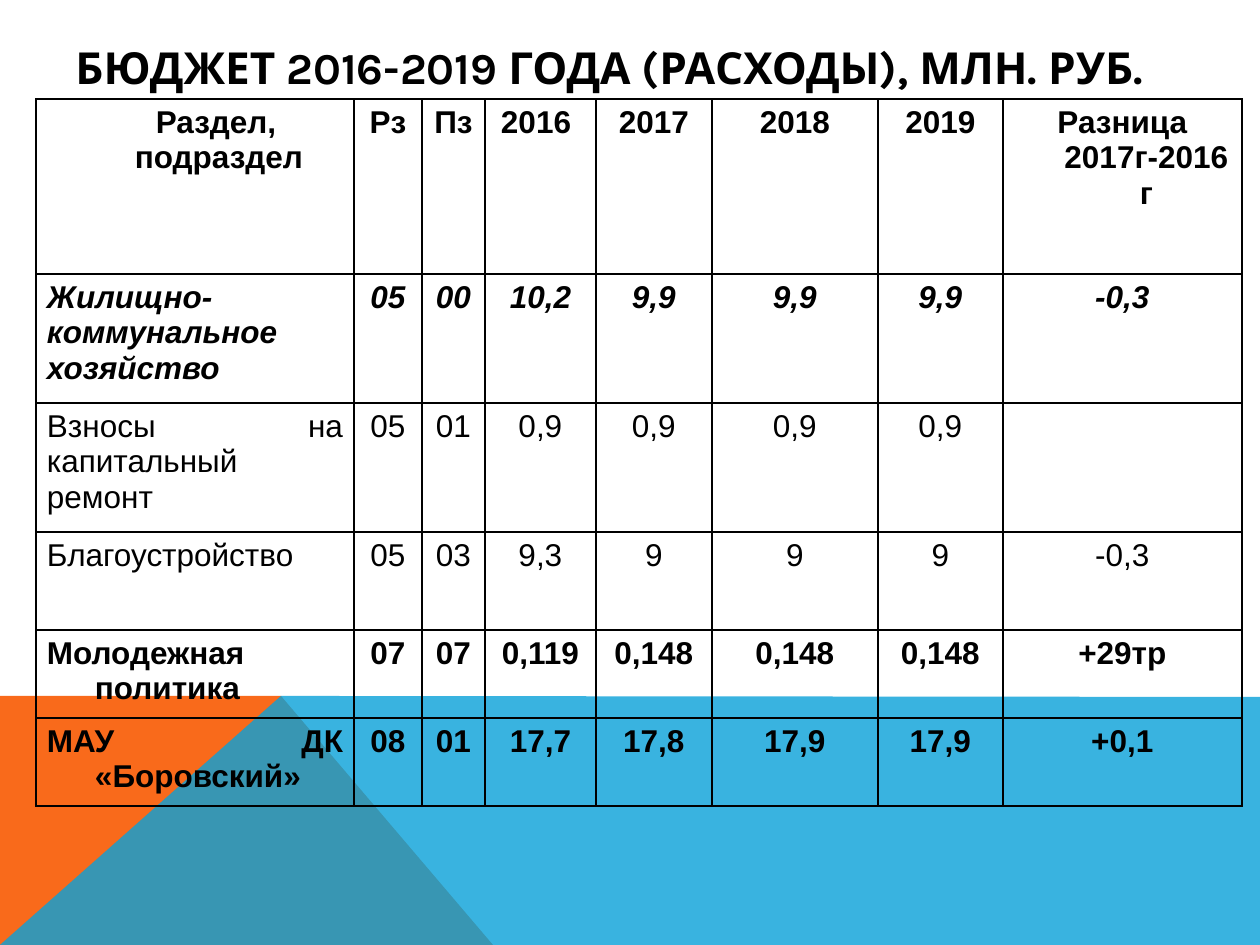
"""Build the 2016-2019 budget expenditure slide."""
from lxml import etree
from pptx import Presentation
from pptx.dml.color import RGBColor
from pptx.enum.text import MSO_ANCHOR, PP_ALIGN
from pptx.oxml.ns import qn
from pptx.util import Emu, Pt

LEFT, CENTER, JUSTIFY = PP_ALIGN.LEFT, PP_ALIGN.CENTER, PP_ALIGN.JUSTIFY
MIDDLE = MSO_ANCHOR.MIDDLE
SCALE = 7257.6
W, H = 1260, 945
BLACK = "000000"
HANG = 48

TITLE = "БЮДЖЕТ 2016-2019 ГОДА (РАСХОДЫ), МЛН. РУБ."
BANDS = [
    ("F96A1B", None, [(0, H), (0, 696), (281, 696), (493, H)]),
    ("08A1D9", 80, [(0, H), (281, 696), (W, 697), (W, H)]),
]
TABLE_AT = (36, 99)
COLS = [318, 68, 63, 111, 116, 166, 125, 239]
HEADER = ["Раздел, подраздел", "Рз", "Пз", "2016 ", "2017", "2018", "2019",
          "Разница 2017г-2016 г"]
BOLD, ITALIC, PLAIN = {"bold": True}, {"bold": True, "italic": True}, {}
# Each row: height, text format, hanging indent of the first cell, values
ROWS = [
    (121, BOLD, HANG, HEADER),
    (49, PLAIN, HANG, [""] * len(COLS)),
    (129, ITALIC, 0, ["Жилищно-коммунальное хозяйство", "05", "00", "10,2", "9,9", "9,9", "9,9", "-0,3"]),
    (129, PLAIN, 0, ["Взносы на капитальный ремонт", "05", "01", "0,9", "0,9", "0,9", "0,9", ""]),
    (98, PLAIN, HANG, ["Благоустройство", "05", "03", "9,3", "9", "9", "9", "-0,3"]),
    (88, BOLD, HANG, ["Молодежная политика", "07", "07", "0,119", "0,148", "0,148", "0,148", "+29тр"]),
    (88, BOLD, HANG, ["МАУ ДК «Боровский»", "08", "01", "17,7", "17,8", "17,9", "17,9", "+0,1"]),
]


def px(n):
    return Emu(round(n * SCALE))


def color(hex_code):
    return RGBColor.from_string(hex_code)


def write(tf, text, font="Arial", size=18, bold=False, italic=False,
          align=LEFT, hang=0, first=None):
    p = tf.paragraphs[0]
    p.alignment = align
    pPr = p._p.get_or_add_pPr()
    pPr.set("marL", str(px(hang)))
    pPr.set("indent", str(px(-hang if first is None else first)))
    p.font.size = Pt(size)
    if not text:
        end = etree.SubElement(p._p, qn("a:endParaRPr"))
        end.set("sz", str(size * 100))
        return
    r = p.add_run()
    r.text = text
    f = r.font
    f.name, f.size, f.bold, f.italic = font, Pt(size), bold, italic
    f.color.rgb = color(BLACK)


def add_band(slide, fill, alpha, points):
    builder = slide.shapes.build_freeform(*points[0], scale=SCALE)
    builder.add_line_segments(points[1:], close=True)
    sp = builder.convert_to_shape()
    sp.shadow.inherit = False
    sp.fill.solid()
    sp.fill.fore_color.rgb = color(fill)
    sp.line.fill.background()
    if alpha:
        clr = sp._element.spPr.find(qn("a:solidFill"))[0]
        etree.SubElement(clr, qn("a:alpha")).set("val", str(alpha * 1000))


def set_borders(cell, hidden):
    tcPr = cell._tc.get_or_add_tcPr()
    for side in "LRTB":
        ln = etree.SubElement(tcPr, qn(f"a:ln{side}"), w=str(Pt(1)))
        if side == hidden:
            etree.SubElement(ln, qn("a:noFill"))
        else:
            fill = etree.SubElement(ln, qn("a:solidFill"))
            etree.SubElement(fill, qn("a:srgbClr")).set("val", BLACK)


def add_budget_table(slide):
    x, y = TABLE_AT
    height = sum(row[0] for row in ROWS)
    table = slide.shapes.add_table(len(ROWS), len(COLS), px(x), px(y),
                                   px(sum(COLS)), px(height)).table
    table.first_row = table.horz_banding = False
    for col, width in zip(table.columns, COLS):
        col.width = px(width)
    for i, (row_height, style, hang, values) in enumerate(ROWS):
        table.rows[i].height = px(row_height)
        for j, text in enumerate(values):
            cell = table.cell(i, j)
            cell.margin_left = cell.margin_right = px(11)
            cell.margin_top = cell.margin_bottom = px(6)
            set_borders(cell, {0: "B", 1: "T"}.get(i))
            cell.fill.background()
            label = j == 0 and i > 1
            write(cell.text_frame, text, align=JUSTIFY if label else CENTER,
                  hang=hang if j == 0 else HANG,
                  first=-6 if i == j == 0 else None, **style)


def main():
    prs = Presentation()
    prs.slide_width, prs.slide_height = px(W), px(H)
    slide = prs.slides.add_slide(prs.slide_layouts[6])
    for band in BANDS:
        add_band(slide, *band)
    tf = slide.shapes.add_textbox(px(63), px(38), px(1134), px(58)).text_frame
    tf.word_wrap = True
    tf.vertical_anchor = MIDDLE
    write(tf, TITLE, font="Karla", size=25.2, bold=True)
    add_budget_table(slide)
    prs.save("out.pptx")


if __name__ == "__main__":
    main()
